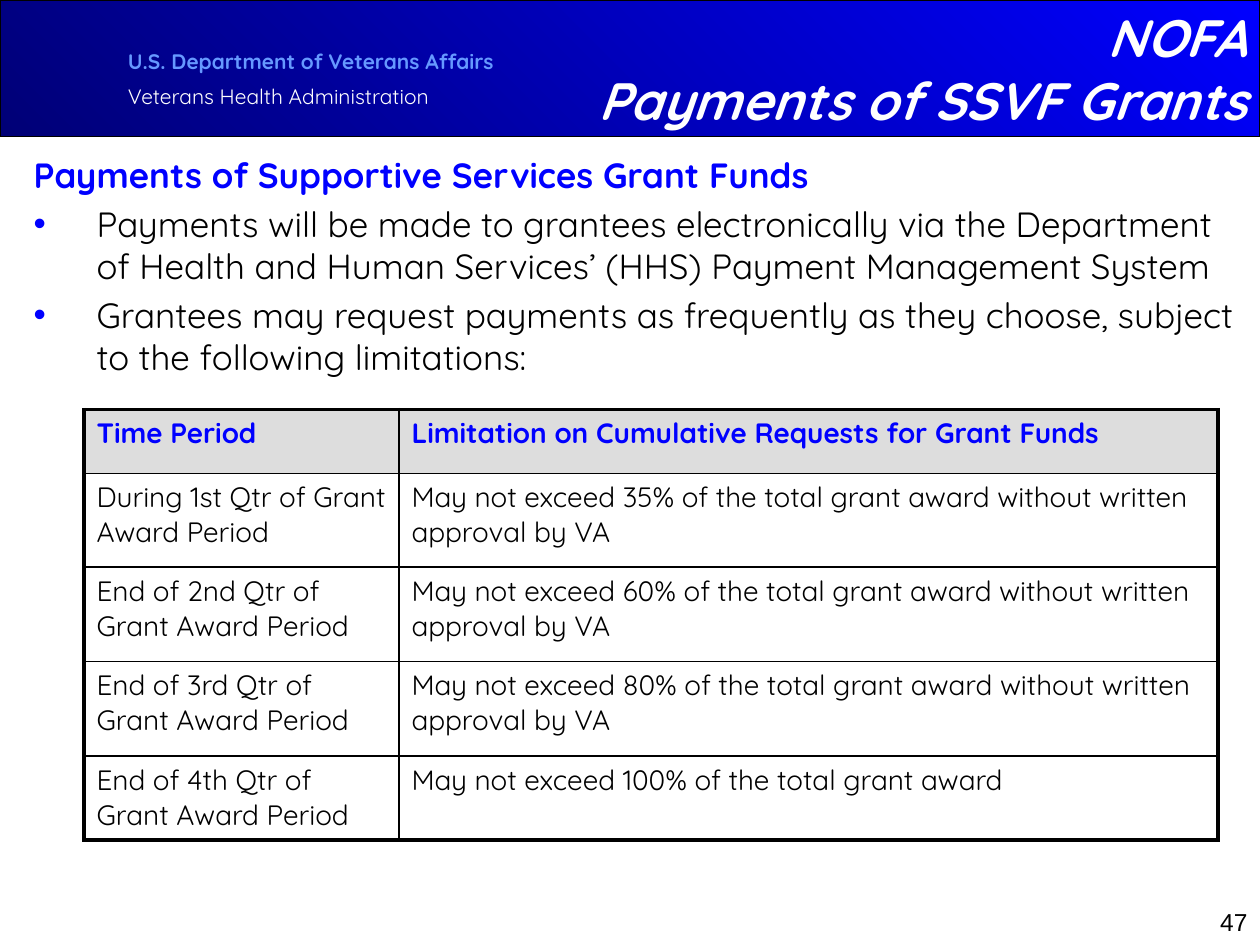
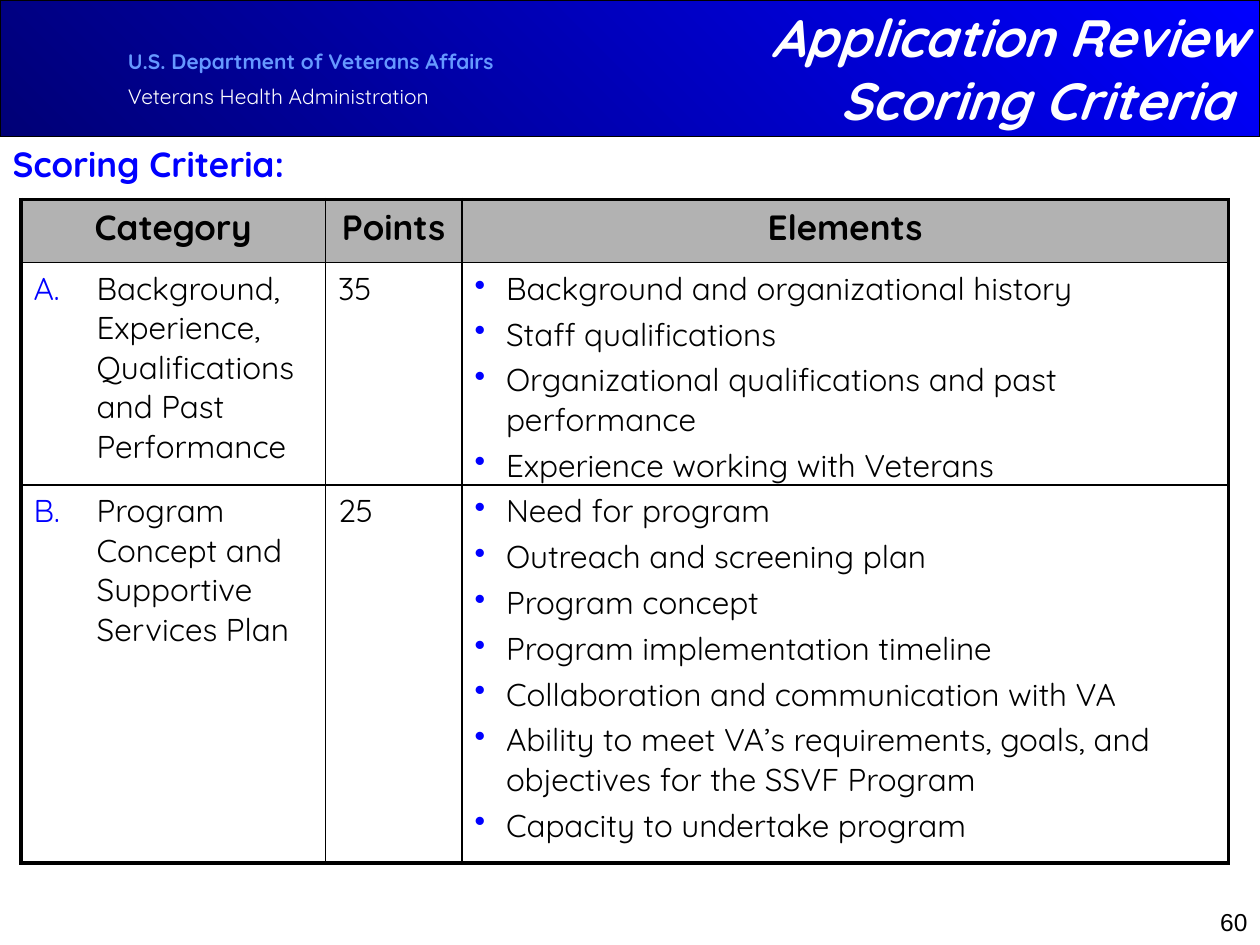
from lxml import etree
from pptx import Presentation
from pptx import util as u
from pptx.dml.color import RGBColor
from pptx.enum import shapes, text
from pptx.oxml.ns import qn

FONT = "Quicksand"
BLUE, BLACK, WHITE = "0000FF", "000000", "FFFFFF"
NAVY, SKY = "000076", "6699FF"
PALE_GRAY, GRAY = "DDDDDD", "B2B2B2"
BAND_HEIGHT = 78
RIGHT, CENTER = text.PP_ALIGN.RIGHT, text.PP_ALIGN.CENTER
BULLET = ("buChar", {"char": "•"})
NO_BULLET = ("buNone", {})


def rgb(color):
    return RGBColor.from_string(color)


def letter(start):
    return ("buAutoNum", {"type": "alphaUcPeriod", "startAt": str(start)})


def add_node(parent, tag, **attributes):
    return etree.SubElement(parent, qn("a:" + tag), attributes)


# Text
def set_bullet(para, mark, indent):
    """Give a paragraph a blue mark and a hanging indent in points."""
    props = para._p.get_or_add_pPr()
    props.set("marL", str(u.Pt(indent)))
    props.set("indent", str(-u.Pt(indent)))
    tag, attributes = mark
    if mark != NO_BULLET:
        add_node(add_node(props, "buClr"), "srgbClr", val=BLUE)
    add_node(props, tag, **attributes)


def style(para, size, color=BLACK, bold=False, italic=False, font=FONT,
          align=None, before=0):
    para.font.name = font
    para.font.size = u.Pt(size)
    para.font.bold = bold
    para.font.italic = italic
    para.font.color.rgb = rgb(color)
    para.space_before = u.Pt(before)
    if align is not None:
        para.alignment = align


def place(box, left, top, width, height):
    box.left, box.top = u.Pt(left), u.Pt(top)
    box.width, box.height = u.Pt(width), u.Pt(height)
    box.text_frame.word_wrap = True
    box.text_frame.auto_size = text.MSO_AUTO_SIZE.NONE


def add_text_box(slide, words, left, top, width, height):
    box = slide.shapes.add_textbox(0, 0, 0, 0)
    place(box, left, top, width, height)
    box.text_frame.text = words
    return box


# Shared parts
def add_header(slide, layout):
    """Make the band and agency name, and hand them to the layout."""
    band = slide.shapes.add_shape(shapes.MSO_SHAPE.RECTANGLE, 0, 0,
                                  u.Pt(720), u.Pt(BAND_HEIGHT))
    band.shadow.inherit = False
    band.fill.gradient()
    band.fill.gradient_angle = 45
    for stop, color in zip(band.fill.gradient_stops, (NAVY, BLUE)):
        stop.color.rgb = rgb(color)
    band.line.color.rgb = rgb(BLACK)
    band.line.width = u.Pt(0.75)

    agency = add_text_box(
        slide, "U.S. Department of Veterans Affairs\n"
        "Veterans Health Administration", 66, 24, 288, 43)
    department, administration = agency.text_frame.paragraphs
    style(department, 12, SKY, bold=True)
    style(administration, 12, WHITE, before=6)

    for position, part in enumerate((band, agency)):
        part.element.nvSpPr.cNvPr.set("id", str(20 + position))
        layout.shapes.element.insert(2 + position, part.element)


def add_slide(deck, layout, title, number):
    slide = deck.slides.add_slide(layout)
    heading = slide.shapes.title
    place(heading, 288, 0, 432, BAND_HEIGHT)
    heading.text_frame.text = title
    heading.text_frame.vertical_anchor = text.MSO_ANCHOR.MIDDLE
    for para in heading.text_frame.paragraphs:
        style(para, 30, WHITE, bold=True, italic=True, align=RIGHT)
    page = add_text_box(slide, str(number), 570, 515, 150, 36)
    style(page.text_frame.paragraphs[0], 14, font="Arial", align=RIGHT)
    return slide


def fill_body(slide, area, heading, points=()):
    """Write a blue heading and its bulleted points."""
    body = slide.placeholders[1]
    place(body, *area)
    body.text_frame.text = "\n".join([heading, *points])
    for index, para in enumerate(body.text_frame.paragraphs):
        set_bullet(para, BULLET if index else NO_BULLET, 36)
        if index:
            style(para, 20, before=4)
        else:
            style(para, 20, BLUE, bold=True)


# Tables
def set_borders(cell, thick_sides):
    props = cell._tc.get_or_add_tcPr()
    for side in "LRTB":
        width = u.Pt(2.25 if side in thick_sides else 1)
        line = add_node(props, "ln" + side, w=str(width))
        add_node(add_node(line, "solidFill"), "srgbClr", val=BLACK)


def outer_sides(row, column, row_count, column_count):
    edges = {"L": column == 0, "R": column == column_count - 1,
             "T": row == 0, "B": row == row_count - 1}
    return [side for side, outside in edges.items() if outside]


def add_grid(slide, left, top, widths, heights, rows, header_fill):
    """Add a table with a thick frame, thin inner lines and a filled header."""
    frame = slide.shapes.add_table(len(heights), len(widths), u.Pt(left),
                                   u.Pt(top), u.Pt(sum(widths)),
                                   u.Pt(sum(heights)))
    table = frame.table
    table.first_row = table.horz_banding = False
    for column, width in zip(table.columns, widths):
        column.width = u.Pt(width)
    for row, height in zip(table.rows, heights):
        row.height = u.Pt(height)
    for r, row in enumerate(rows):
        for c, words in enumerate(row):
            cell = table.cell(r, c)
            cell.text = words
            cell.margin_bottom = 0
            set_borders(cell, outer_sides(r, c, len(heights), len(widths)))
            if r == 0:
                cell.fill.solid()
                cell.fill.fore_color.rgb = rgb(header_fill)
            else:
                cell.fill.background()
    return table


def style_row(table, row, size, **options):
    for cell in table.rows[row].cells:
        for para in cell.text_frame.paragraphs:
            style(para, size, **options)


# Slides
def build_payments(slide):
    fill_body(slide, (12, 84, 708, 426),
              "Payments of Supportive Services Grant Funds", [
        "Payments will be made to grantees electronically via the Department "
        "of Health and Human Services’ (HHS) Payment Management System",
        "Grantees may request payments as frequently as they choose, subject "
        "to the following limitations:"])
    rows = [("Time Period", "Limitation on Cumulative Requests for Grant Funds")]
    approval = " without written approval by VA"
    for period, percent, condition in (
            ("During 1st", 35, approval), ("End of 2nd", 60, approval),
            ("End of 3rd", 80, approval), ("End of 4th", 100, "")):
        rows.append((f"{period} Qtr of Grant Award Period",
                     f"May not exceed {percent}% of the total grant award"
                     + condition))
    table = add_grid(slide, 48, 234, [180, 468], [36.5, 53.5, 54, 54, 48],
                     rows, PALE_GRAY)
    style_row(table, 0, 16, color=BLUE, bold=True)
    for row in range(1, len(rows)):
        style_row(table, row, 16)


def build_scoring(slide):
    fill_body(slide, (0, 78, 702, 402), "Scoring Criteria:")
    rows = [
        ("Category", "Points", "Elements"),
        ("Background, Experience, Qualifications and Past Performance", "35",
         "Background and organizational history\n"
         "Staff qualifications\n"
         "Organizational qualifications and past performance\n"
         "Experience working with Veterans"),
        ("Program Concept and Supportive Services Plan", "25",
         "Need for program\n"
         "Outreach and screening plan\n"
         "Program concept\n"
         "Program implementation timeline\n"
         "Collaboration and communication with VA\n"
         "Ability to meet VA’s requirements, goals, and objectives for the "
         "SSVF Program\n"
         "Capacity to undertake program"),
    ]
    table = add_grid(slide, 12, 114, [174, 78, 438], [36, 126, 216],
                     rows, GRAY)
    style_row(table, 0, 20, bold=True, align=CENTER)
    for row in range(1, len(rows)):
        category = table.cell(row, 0).text_frame.paragraphs[0]
        set_bullet(category, letter(row), 36)
        elements = table.cell(row, 2).text_frame.paragraphs
        for para in elements:
            set_bullet(para, BULLET, 18)
        style_row(table, row, 18)
        for para in elements[1:]:
            para.space_before = u.Pt(3.6)


def main():
    deck = Presentation()
    deck.slide_width, deck.slide_height = u.Pt(720), u.Pt(540)
    layout = deck.slide_layouts[1]

    payments = add_slide(deck, layout, "NOFA\vPayments of SSVF Grants", 47)
    add_header(payments, layout)
    build_payments(payments)

    scoring = add_slide(deck, layout,
                        "Application Review\nScoring Criteria ", 60)
    build_scoring(scoring)
    deck.save("out.pptx")


if __name__ == "__main__":
    main()
